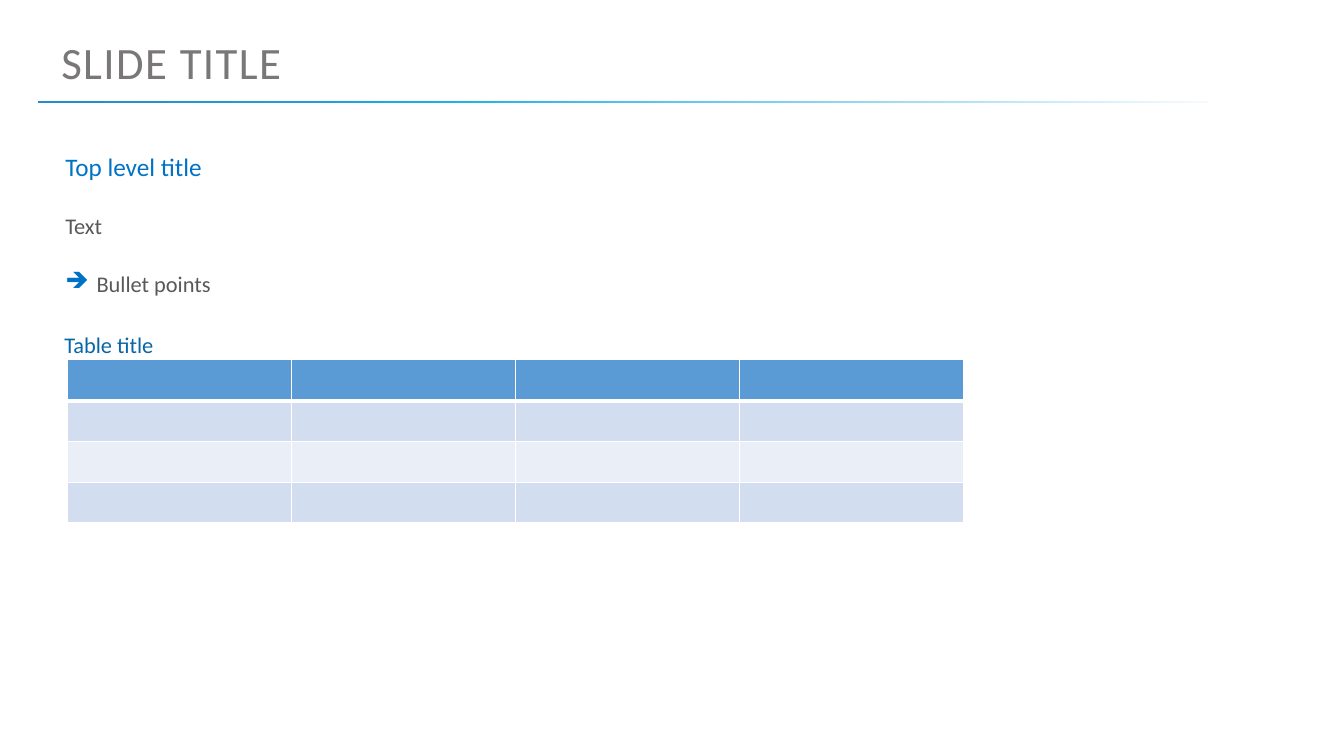
from lxml import etree
from pptx import Presentation
from pptx.dml.color import RGBColor
from pptx.enum import shapes, text
from pptx.oxml import ns
from pptx.util import Inches, Pt

FONT = "Calibri"
BLUE = "0072C6"
GREY = "595959"
HEADER_FILL = "5B9BD5"
BAND_FILLS = ["D2DEEF", "EAEFF7"]
RULE_STOPS = [(0, "F7FAFD"), (67, "17AFE6"), (78, "209DD8"), (100, "248CC9")]


def color(value):
    return RGBColor.from_string(value)


def add_element(parent, tag, **attributes):
    element = etree.SubElement(parent, ns.qn(tag))
    for name, value in attributes.items():
        element.set(name, str(value))
    return element


def add_gradient_rule(slide, left, top, width, height, stops):
    shape = slide.shapes.add_shape(shapes.MSO_SHAPE.RECTANGLE, Inches(left),
                                   Inches(top), Inches(width), Inches(height))
    shape.shadow.inherit = False
    shape.line.fill.background()
    shape.fill.gradient()
    shape.fill.gradient_angle = 180
    stop_list = shape.element.spPr.find(".//" + ns.qn("a:gsLst"))
    for old_stop in list(stop_list):
        stop_list.remove(old_stop)
    for position, value in stops:
        stop = add_element(stop_list, "a:gs", pos=position * 1000)
        add_element(stop, "a:srgbClr", val=value)


def add_bullet(paragraph, character, bullet_color, indent):
    properties = paragraph._p.get_or_add_pPr()
    properties.set("marL", str(Inches(indent)))
    properties.set("indent", str(-Inches(indent)))
    bullet_fill = add_element(properties, "a:buClr")
    add_element(bullet_fill, "a:srgbClr", val=bullet_color)
    add_element(properties, "a:buChar", char=character)


def add_text(slide, words, left, top, width, height, size, font_color,
             bullet=None, spacing=None):
    box = slide.shapes.add_textbox(Inches(left), Inches(top),
                                   Inches(width), Inches(height))
    frame = box.text_frame
    frame.word_wrap = True
    frame.auto_size = text.MSO_AUTO_SIZE.SHAPE_TO_FIT_TEXT
    frame.text = words
    paragraph = frame.paragraphs[0]
    if bullet:
        add_bullet(paragraph, bullet, BLUE, 0.31)
    run = paragraph.runs[0]
    run.font.name = FONT
    run.font.size = Pt(size)
    run.font.color.rgb = color(font_color)
    if spacing:
        run.font._element.set("spc", str(spacing * 100))


def style_cell(cell, fill_color, border_widths):
    properties = cell._tc.get_or_add_tcPr()
    for side, width in border_widths.items():
        line = add_element(properties, "a:ln" + side, w=Pt(width))
        line_fill = add_element(line, "a:solidFill")
        add_element(line_fill, "a:srgbClr", val="FFFFFF")
    cell.fill.solid()
    cell.fill.fore_color.rgb = color(fill_color)


def add_banded_table(slide, row_count, column_count, left, top, width, height):
    table = slide.shapes.add_table(row_count, column_count, Inches(left), Inches(top),
                                   Inches(width), Inches(height)).table
    for index, row in enumerate(table.rows):
        fill_color = BAND_FILLS[(index - 1) % 2] if index else HEADER_FILL
        # A thick line parts the header from the body
        widths = {"L": 1, "R": 1, "T": 3 if index == 1 else 1, "B": 1 if index else 3}
        for cell in row.cells:
            style_cell(cell, fill_color, widths)


def main():
    presentation = Presentation()
    presentation.slide_width = Inches(13.33)
    presentation.slide_height = Inches(7.5)
    slide = presentation.slides.add_slide(presentation.slide_layouts[6])

    # Title and fading rule
    add_gradient_rule(slide, 0.38, 1, 11.6, 0.02, RULE_STOPS)
    add_text(slide, "SLIDE TITLE", 0.51, 0.3, 5.33, 0.64, 32, "7A7778", spacing=1)

    # Text levels
    add_text(slide, "Top level title", 0.55, 1.45, 5.26, 0.4, 18, BLUE)
    add_text(slide, "Text", 0.55, 2.06, 6.67, 0.37, 16, GREY)
    add_text(slide, "Bullet points", 0.55, 2.63, 6.67, 0.37, 16, GREY, bullet="➔")

    # Table with its title
    add_text(slide, "Table title", 0.54, 3.24, 6.67, 0.37, 16, "0766A6")
    add_banded_table(slide, 4, 4, 0.67, 3.57, 8.89, 1.62)

    presentation.save("out.pptx")


if __name__ == "__main__":
    main()
